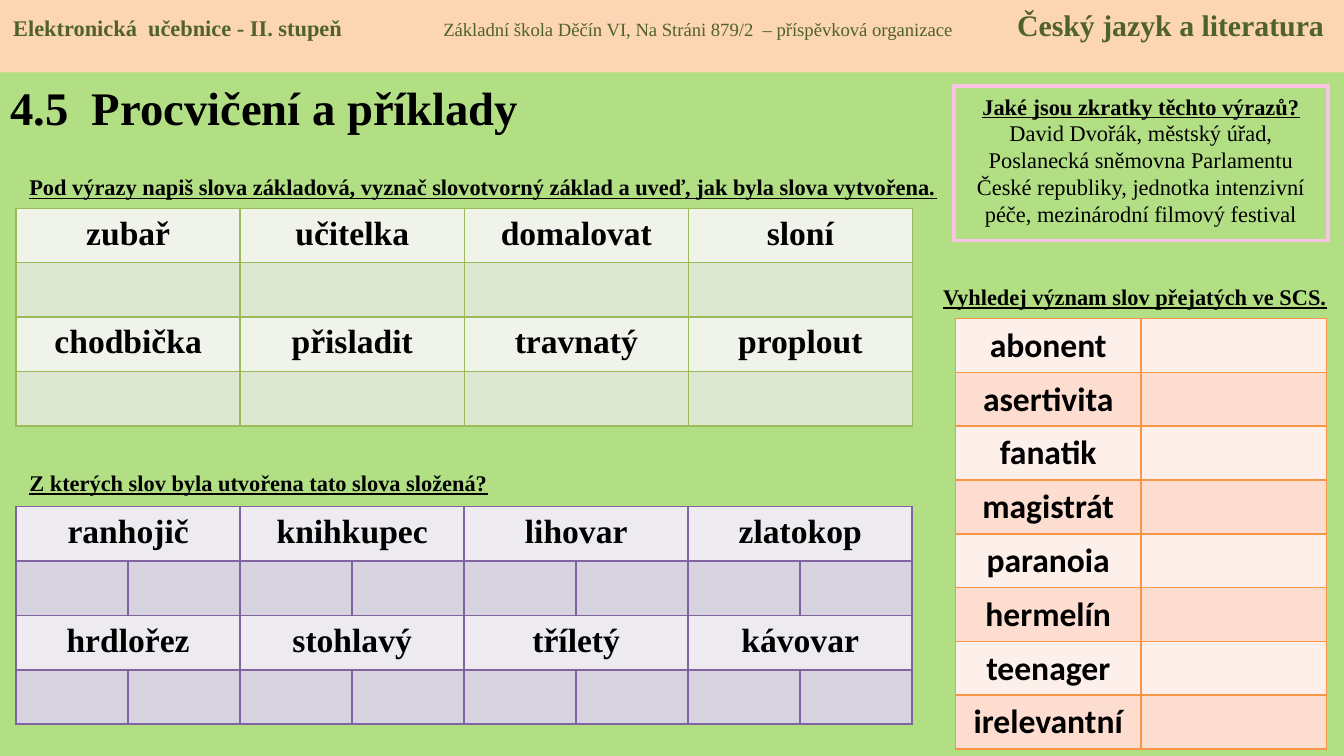
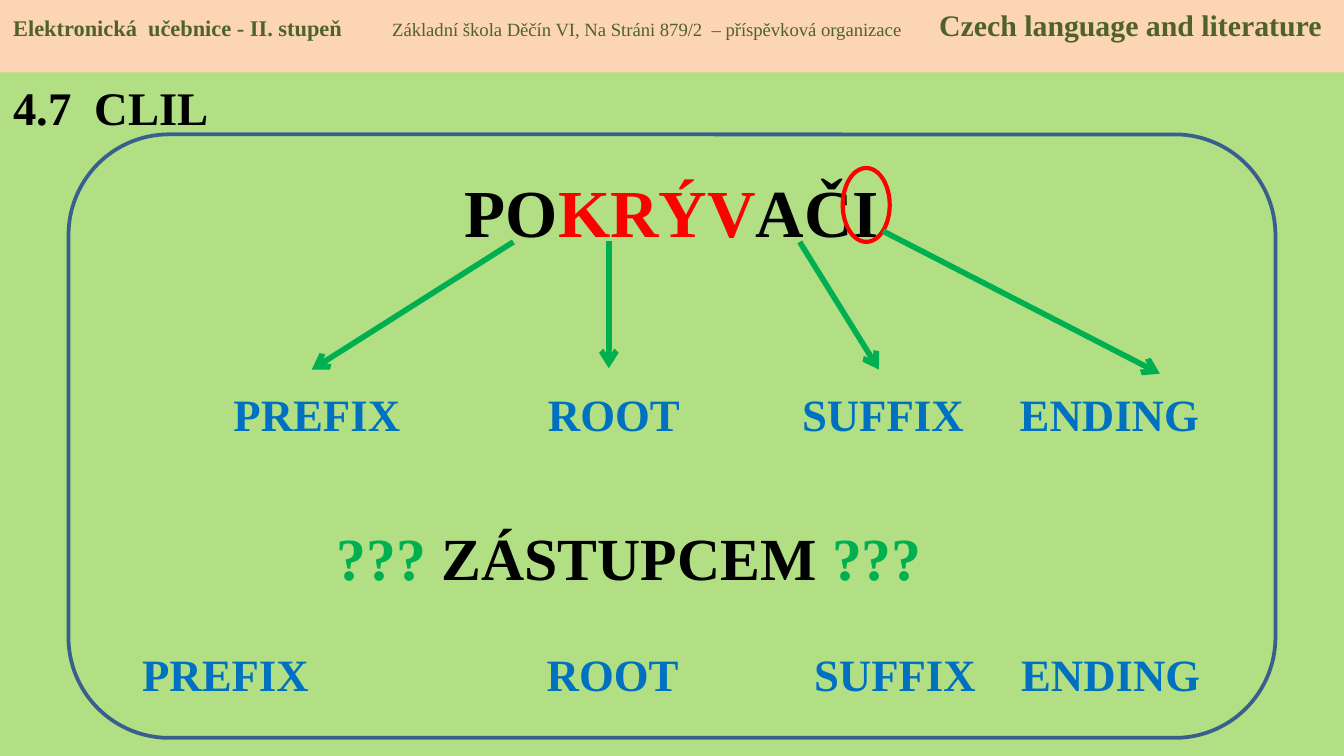
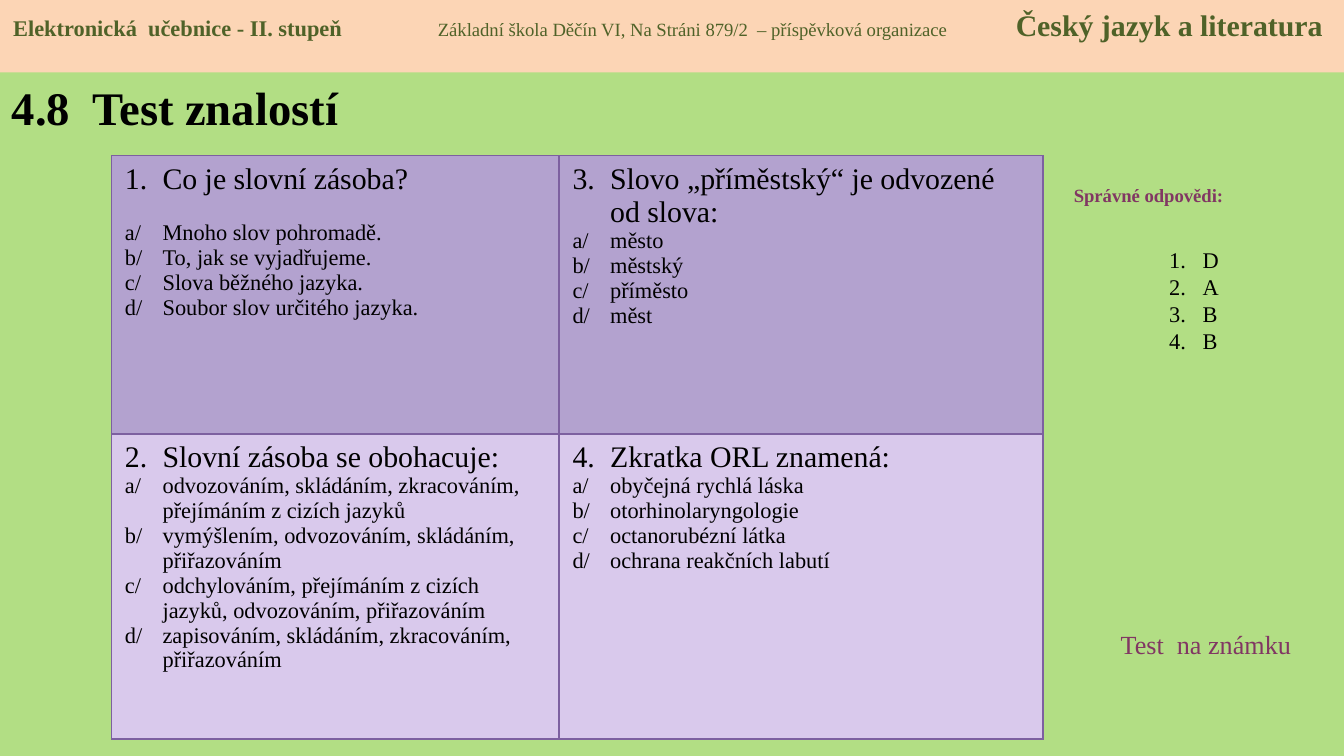
import pptx
import pptx.util
import pptx.dml.color
import pptx.enum.shapes
import pptx.enum.text
import pptx.oxml
import pptx.oxml.ns
from pptx.util import Inches

SERIF = "Times New Roman"
COLORS = {
    "page": "B2DE84", "band": "FCD5B5", "band_text": "4F6228", "ink": "000000",
    "pink": "FDC3E4", "frame": "3A5F8C", "red": "FF0000", "arrow": "00B050",
    "label": "0070C0", "plum": "813763",
    "green_line": "9BBB59", "green_light": "EFF3EA", "green_dark": "DEE7D1",
    "violet_line": "8064A2", "violet_light": "EDEAF0", "violet_dark": "D8D3E0",
    "orange_line": "F79646", "orange_light": "FDEFE9", "orange_dark": "FCDDCF",
    "quiz_line": "7D60A0", "quiz_dark": "B3A2CF", "quiz_light": "D9C9EC",
}
RGB = {name: pptx.dml.color.RGBColor.from_string(value) for name, value in COLORS.items()}
ALIGN = pptx.enum.text.PP_ALIGN
ANCHOR = pptx.enum.text.MSO_ANCHOR
SHAPE = pptx.enum.shapes.MSO_SHAPE


def write(para, spans, align=ALIGN.LEFT, tabs=(), font=SERIF):
    """Add spans of (text, size, color, bold, underline) to a paragraph."""
    para.alignment = align
    if tabs:
        properties = para._p.get_or_add_pPr()
        tab_list = properties.makeelement(pptx.oxml.ns.qn("a:tabLst"), {})
        properties.append(tab_list)
        for tab in tabs:
            stop = tab_list.makeelement(pptx.oxml.ns.qn("a:tab"), {"pos": str(Inches(tab)), "algn": "l"})
            tab_list.append(stop)
    for text, size, color, bold, underline in spans:
        span = para.add_run()
        span.text = text
        span.font.name = font
        span.font.size = pptx.util.Pt(size)
        span.font.color.rgb = RGB[color]
        span.font.bold = bold
        span.font.underline = underline


def style_cell(cell, fill, border, weight):
    """Draw the four borders of a cell, then its fill."""
    properties = cell._tc.get_or_add_tcPr()
    for side in ("lnL", "lnR", "lnT", "lnB"):
        properties.append(pptx.oxml.parse_xml(
            f'<a:{side} {pptx.oxml.ns.nsdecls("a")} w="{pptx.util.Pt(weight)}"><a:solidFill>'
            f'<a:srgbClr val="{COLORS[border]}"/></a:solidFill></a:{side}>'))
    cell.fill.solid()
    cell.fill.fore_color.rgb = RGB[fill]


# Widescreen 16:9
deck = pptx.Presentation()
deck.slide_width = Inches(10)
deck.slide_height = Inches(10) * 9 // 16

# Shared background, band and title: title, left, width, subject, band tab stops
headings = [
    ("4.5  Procvičení a příklady", -0.02, 4.37, "Český jazyk a literatura", (3.2, 7.47)),
    ("4.7  CLIL", 0, 2.68, "Czech language and literature", (2.82, 6.89)),
    ("4.8  Test znalostí", -0.01, 3.19, "Český jazyk a literatura", (3.16, 7.46)),
]
pages = []
for title, left, width, subject, tabs in headings:
    page = deck.slides.add_slide(deck.slide_layouts[6])
    pages.append(page)
    page.background.fill.solid()
    page.background.fill.fore_color.rgb = RGB["page"]

    box = page.shapes.add_textbox(Inches(left), Inches(0.54), Inches(width), Inches(0.65))
    box.text_frame.word_wrap = True
    write(box.text_frame.paragraphs[0], [(title, 25, "ink", True, False)])

    band = page.shapes.add_shape(SHAPE.RECTANGLE, 0, 0, Inches(10), Inches(0.54))
    band.shadow.inherit = False
    band.fill.solid()
    band.fill.fore_color.rgb = RGB["band"]
    band.line.fill.background()
    band.text_frame.vertical_anchor = ANCHOR.TOP
    write(band.text_frame.paragraphs[0], [
        ("Elektronická  učebnice - II. stupeň\t", 12, "band_text", True, False),
        ("Základní škola Děčín VI, Na Stráni 879/2  – příspěvková organizace\t",
         10, "band_text", False, False),
        (subject, 16, "band_text", True, False)], tabs=tabs)
exercises, clil, quiz = pages

# Outlined shapes
outlines = []
for page, kind, place, color, weight in [
    (exercises, SHAPE.RECTANGLE, (7.1, 0.64, 2.78, 1.15), "pink", 2),
    (clil, SHAPE.ROUNDED_RECTANGLE, (0.51, 1, 8.98, 4.49), "frame", 2),
    (clil, SHAPE.OVAL, (6.27, 1.25, 0.35, 0.55), "red", 2.25),
]:
    outline = page.shapes.add_shape(kind, *map(Inches, place))
    outline.shadow.inherit = False
    outline.fill.background()
    outline.line.color.rgb = RGB[color]
    outline.line.width = pptx.util.Pt(weight)
    outlines.append(outline)
abbreviations, word_frame, _ = outlines

# Exercises: abbreviations box
frame = abbreviations.text_frame
frame.word_wrap = True
frame.vertical_anchor = ANCHOR.MIDDLE
frame.margin_bottom = Inches(0.1)
for para, text, heading in [
    (frame.paragraphs[0], "Jaké jsou zkratky těchto výrazů?", True),
    (frame.add_paragraph(), "David Dvořák, městský úřad, Poslanecká sněmovna Parlamentu "
     "České republiky, jednotka intenzivní péče, mezinárodní filmový festival", False),
]:
    write(para, [(text, 12, "ink", heading, heading)], ALIGN.CENTER)
    para.line_spacing = pptx.util.Pt(14.4)

# Exercises: prompts above the tables
box = exercises.shapes.add_textbox(Inches(0.12), Inches(1.24), Inches(7.01), Inches(2.52))
box.text_frame.word_wrap = True
write(box.text_frame.paragraphs[0], [(
    "Pod výrazy napiš slova základová, vyznač slovotvorný základ a uveď, jak byla slova vytvořena.",
    12, "ink", True, True)])
para = box.text_frame.add_paragraph()
write(para, [("Z kterých slov byla utvořena tato slova složená?", 12, "ink", True, True)])
para.space_before = pptx.util.Pt(144)

# Single-line boxes
for page, place, text, size, color, bold, underline, align, anchor in [
    (exercises, (6.89, 1.99, 3.11, 0.43), "Vyhledej význam slov přejatých ve SCS.",
     12, "ink", True, True, ALIGN.CENTER, ANCHOR.MIDDLE),
    (quiz, (7.76, 1.32, 1.57, 0.27), "Správné odpovědi:",
     10, "plum", True, False, ALIGN.CENTER, ANCHOR.TOP),
    (quiz, (8.24, 4.63, 1.57, 0.34), "Test  na známku",
     14, "plum", False, False, ALIGN.LEFT, ANCHOR.TOP),
]:
    box = page.shapes.add_textbox(*map(Inches, place))
    box.text_frame.word_wrap = True
    box.text_frame.vertical_anchor = anchor
    write(box.text_frame.paragraphs[0], [(text, size, color, bold, underline)], align)

# Exercises: word tables; a row with fewer words spreads them over merged columns
loanwords = ["abonent", "asertivita", "fanatik", "magistrát",
             "paranoia", "hermelín", "teenager", "irelevantní"]
for left, top, width, row_height, columns, hue, font, rows in [
    (0.12, 1.55, 6.67, 0.405, 4, "green", SERIF, [
        ["zubař", "učitelka", "domalovat", "sloní"], [""] * 4,
        ["chodbička", "přisladit", "travnatý", "proplout"], [""] * 4]),
    (0.12, 3.77, 6.67, 0.405, 8, "violet", SERIF, [
        ["ranhojič", "knihkupec", "lihovar", "zlatokop"], [""] * 8,
        ["hrdlořez", "stohlavý", "tříletý", "kávovar"], [""] * 8]),
    (7.11, 2.37, 2.76, 0.4, 2, "orange", "Calibri", [[word, ""] for word in loanwords]),
]:
    table = exercises.shapes.add_table(
        len(rows), columns, Inches(left), Inches(top),
        Inches(width), Inches(row_height * len(rows))).table
    table.first_row = table.horz_banding = False
    for column in table.columns:
        column.width = Inches(width / columns)
    for row, words in enumerate(rows):
        table.rows[row].height = Inches(row_height)
        shade = hue + ("_dark" if row % 2 else "_light")
        for column in range(columns):
            style_cell(table.cell(row, column), shade, hue + "_line", 1)
        span_width = columns // len(words)
        for index, word in enumerate(words):
            cell = table.cell(row, index * span_width)
            if span_width > 1:
                cell.merge(table.cell(row, (index + 1) * span_width - 1))
            if word:
                write(cell.text_frame.paragraphs[0], [(word, 18, "ink", True, False)],
                      ALIGN.CENTER, font=font)

# CLIL: word analysis, with the space before each line
frame = word_frame.text_frame
frame.word_wrap = True
frame.vertical_anchor = ANCHOR.TOP
labels = [("\tPREFIX\tROOT\tSUFFIX\tENDING", 24, "label")]
for index, (gap, align, tabs, spans) in enumerate([
    (0, ALIGN.CENTER, (), [("PO", 36, "ink"), ("KRÝV", 36, "red"), ("AČI", 36, "ink")]),
    (72.5, ALIGN.LEFT, (0.91, 3.25, 5.14, 6.76), labels),
    (43, ALIGN.LEFT, (1.68,), [("\t??? ", 32, "arrow"), ("ZÁSTUPCEM ", 32, "ink"),
                               ("???", 32, "arrow")]),
    (29, ALIGN.LEFT, (0.23, 3.24, 5.23, 6.77), labels),
]):
    para = frame.add_paragraph() if index else frame.paragraphs[0]
    write(para, [(*span, True, False) for span in spans], align, tabs)
    if gap:
        para.space_before = pptx.util.Pt(gap)

# CLIL: arrows from the word to its parts
for ends in [(3.82, 1.8, 2.32, 2.75), (4.53, 1.79, 4.53, 2.74),
             (5.95, 1.8, 6.54, 2.75), (6.57, 1.72, 8.63, 2.78)]:
    arrow = clil.shapes.add_connector(
        pptx.enum.shapes.MSO_CONNECTOR.STRAIGHT, *map(Inches, ends))
    arrow.line.color.rgb = RGB["arrow"]
    arrow.line.width = pptx.util.Pt(3)
    namespace = pptx.oxml.ns.nsdecls("a")
    arrow.line._get_or_add_ln().append(pptx.oxml.parse_xml(f'<a:tailEnd {namespace} type="arrow"/>'))
    arrow._element.spPr.append(pptx.oxml.parse_xml(f"<a:effectLst {namespace}/>"))

# Quiz: questions (16 pt) and options (12 pt) with hanging labels
questions = [
    [["1.\tCo je slovní zásoba?", "a/\tMnoho slov pohromadě.", "b/\tTo, jak se vyjadřujeme.",
      "c/\tSlova běžného jazyka.", "d/\tSoubor slov určitého jazyka."],
     ["3.\tSlovo „příměstský“ je odvozené", "\tod slova:", "a/\tměsto", "b/\tměstský",
      "c/\tpříměsto", "d/\tměst"]],
    [["2.\tSlovní zásoba se obohacuje:",
      "a/\todvozováním, skládáním, zkracováním, přejímáním z cizích jazyků",
      "b/\tvymýšlením, odvozováním, skládáním, přiřazováním",
      "c/\todchylováním, přejímáním z cizích jazyků, odvozováním, přiřazováním",
      "d/\tzapisováním, skládáním, zkracováním, přiřazováním"],
     ["4.\tZkratka ORL znamená:", "a/\tobyčejná rychlá láska", "b/\totorhinolaryngologie",
      "c/\toctanorubézní látka", "d/\tochrana reakčních labutí"]],
]
table = quiz.shapes.add_table(2, 2, Inches(0.83), Inches(1.16), Inches(6.93), Inches(4.34)).table
table.first_row = table.horz_banding = False
for column, width in zip(table.columns, (3.33, 3.6)):
    column.width = Inches(width)
for row, height in enumerate((2.07, 2.27)):
    table.rows[row].height = Inches(height)
    for column, lines in enumerate(questions[row]):
        cell = table.cell(row, column)
        style_cell(cell, ("quiz_dark", "quiz_light")[row], "quiz_line", 0.75)
        for index, line in enumerate(lines):
            para = cell.text_frame.add_paragraph() if index else cell.text_frame.paragraphs[0]
            properties = para._p.get_or_add_pPr()
            properties.set("marL", str(Inches(0.28)))
            properties.set("indent", str(Inches(-0.28)))
            write(para, [(line, 12 if "/" in line else 16, "ink", False, False)])
table.cell(0, 0).text_frame.paragraphs[1].space_before = pptx.util.Pt(13.5)

# Quiz: numbered answers
box = quiz.shapes.add_textbox(Inches(8.6), Inches(1.59), Inches(0.55), Inches(1.31))
frame = box.text_frame
frame.word_wrap = True
frame.margin_top = Inches(0.24)
for index, answer in enumerate("DABB"):
    para = frame.add_paragraph() if index else frame.paragraphs[0]
    properties = para._p.get_or_add_pPr()
    properties.set("marL", str(Inches(0.25)))
    properties.set("indent", str(Inches(-0.25)))
    for tag in (f'buFont {pptx.oxml.ns.nsdecls("a")} typeface="{SERIF}"',
                f'buAutoNum {pptx.oxml.ns.nsdecls("a")} type="arabicPeriod"'):
        properties.append(pptx.oxml.parse_xml(f"<a:{tag}/>"))
    write(para, [(answer, 12, "ink", False, False)])
    para.line_spacing = pptx.util.Pt(14.4)

deck.save("out.pptx")
